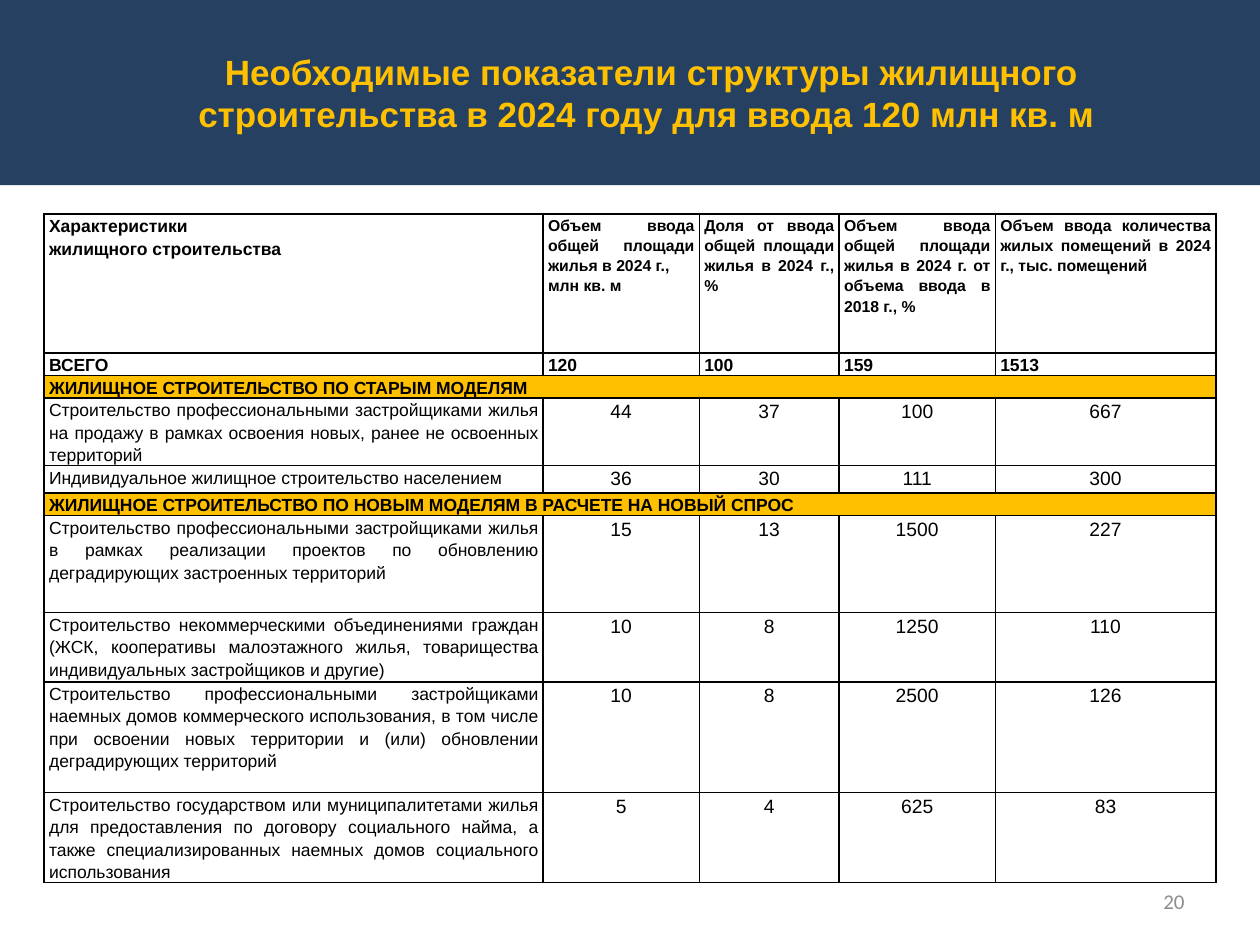
"""Builds a slide with the 2024 housing construction indicators."""
from lxml.etree import SubElement
from pptx import Presentation
from pptx.dml.color import RGBColor
from pptx.enum.shapes import MSO_SHAPE
from pptx.enum.text import MSO_ANCHOR, PP_ALIGN
from pptx.oxml import parse_xml
from pptx.oxml.ns import nsdecls, qn
from pptx.util import Inches, Pt

GRID = Inches(0.1)
SLIDE_COLUMNS, SLIDE_ROWS = 100, 75
COLORS = {"navy": "254061", "gold": "FFC000", "black": "000000", "gray": "8C8C8C"}

TITLE = "Необходимые показатели структуры жилищного строительства в 2024 году для ввода 120 млн кв. м "
TITLE_FORMAT = {"name": "Arial", "size": Pt(20), "bold": True}
NUMBER_FORMAT = {"name": "Calibri", "size": Pt(12), "bold": False}
LABEL_FORMAT = {"name": "Arial", "size": Pt(10), "bold": False}
STRONG_FORMAT = {**LABEL_FORMAT, "bold": True}
HEADING_FORMAT = {**STRONG_FORMAT, "size": Pt(9)}
VALUE_FORMAT = {**LABEL_FORMAT, "size": Pt(11)}

COLUMN_WIDTHS = [39.6, 12.4, 11.1, 12.4, 17.5]
ROWS = [
    ("heading", 11, ["Характеристики\nжилищного строительства",
                     "Объем ввода общей площади жилья в 2024 г.,\nмлн кв. м",
                     "Доля от ввода общей площади жилья в 2024 г., %",
                     "Объем ввода общей площади жилья в 2024 г. от объема ввода в 2018 г., %",
                     "Объем ввода количества жилых помещений в 2024 г., тыс. помещений"]),
    ("total", 1.1, ["ВСЕГО", "120", "100", "159", "1513"]),
    ("section", 1.1, ["ЖИЛИЩНОЕ СТРОИТЕЛЬСТВО ПО СТАРЫМ МОДЕЛЯМ"]),
    ("data", 4.4, ["Строительство профессиональными застройщиками жилья на продажу "
                   "в рамках освоения новых, ранее не освоенных территорий",
                   "44", "37", "100", "667"]),
    ("data", 2.2, ["Индивидуальное жилищное строительство населением",
                   "36", "30", "111", "300"]),
    ("section", 1.1, ["ЖИЛИЩНОЕ СТРОИТЕЛЬСТВО ПО НОВЫМ МОДЕЛЯМ В РАСЧЕТЕ НА НОВЫЙ СПРОС"]),
    ("data", 7.7, ["Строительство профессиональными застройщиками жилья в рамках реализации "
                   "проектов по обновлению деградирующих застроенных территорий",
                   "15", "13", "1500", "227"]),
    ("data", 5.5, ["Строительство некоммерческими объединениями граждан (ЖСК, кооперативы "
                   "малоэтажного жилья, товарищества индивидуальных застройщиков и другие)",
                   "10", "8", "1250", "110"]),
    ("data", 8.8, ["Строительство профессиональными застройщиками наемных домов коммерческого "
                   "использования, в том числе при освоении новых территории и (или) "
                   "обновлении деградирующих территорий",
                   "10", "8", "2500", "126"]),
    ("data", 6.6, ["Строительство государством или муниципалитетами жилья для предоставления "
                   "по договору социального найма, а также специализированных наемных домов "
                   "социального использования",
                   "5", "4", "625", "83"]),
]


def color(name):
    """Return the named colour."""
    return RGBColor.from_string(COLORS[name])


def grid(*cells):
    """Turn grid cells into lengths."""
    return [round(cell * GRID) for cell in cells]


def write(frame, text, font_format, color_name, alignment, line_spacing=None):
    """Write one paragraph per line of text in one format."""
    frame.text = text
    frame.word_wrap = True
    for paragraph in frame.paragraphs:
        paragraph.alignment = alignment
        paragraph.line_spacing = line_spacing
        for run in paragraph.runs:
            for attribute, value in font_format.items():
                setattr(run.font, attribute, value)
            run.font.color.rgb = color(color_name)


def add_band(slide):
    """Add the title band behind everything else."""
    band = slide.shapes.add_shape(MSO_SHAPE.RECTANGLE, *grid(0, 0, SLIDE_COLUMNS, 14.7))
    band.shadow.inherit = False
    band.fill.solid()
    band.fill.fore_color.rgb = color("navy")
    band.line.fill.background()
    band.element.getparent().insert(2, band.element)


def set_title(slide):
    """Place and format the title."""
    title = slide.shapes.title
    title.left, title.top, title.width, title.height = grid(6.7, 1.1, 90, 12.5)
    title.text_frame.vertical_anchor = MSO_ANCHOR.MIDDLE
    write(title.text_frame, TITLE, TITLE_FORMAT, "gold", PP_ALIGN.CENTER)


def add_slide_number(slide, number):
    """Add the slide number."""
    box = slide.shapes.add_textbox(*grid(71.7, 69.5, 23.3, 4))
    box.text_frame.vertical_anchor = MSO_ANCHOR.MIDDLE
    write(box.text_frame, number, NUMBER_FORMAT, "gray", PP_ALIGN.RIGHT)


def set_borders(cell):
    """Draw a thin line on each side of a cell."""
    properties = cell._tc.get_or_add_tcPr()
    for index, side in enumerate("LRTB"):
        line = parse_xml(f'<a:ln{side} {nsdecls("a")} w="{Pt(1)}"/>')
        fill = SubElement(line, qn("a:solidFill"))
        SubElement(fill, qn("a:srgbClr"), val=COLORS["black"])
        properties.insert(index, line)


def format_cell(cell, kind):
    """Set margins, fill and borders of a cell."""
    margins = {"margin_left": 0.04, "margin_right": 0.04, "margin_top": 0, "margin_bottom": 0}
    for attribute, value in margins.items():
        setattr(cell, attribute, Inches(value))
    if kind == "section":
        cell.fill.solid()
        cell.fill.fore_color.rgb = color("gold")
    else:
        cell.fill.background()
    set_borders(cell)


def cell_format(kind, column):
    """Return the font format and alignment for a cell."""
    if kind == "data":
        return (VALUE_FORMAT, PP_ALIGN.CENTER) if column else (LABEL_FORMAT, PP_ALIGN.JUSTIFY)
    if kind == "heading" and column:
        return HEADING_FORMAT, PP_ALIGN.JUSTIFY
    return STRONG_FORMAT, PP_ALIGN.JUSTIFY


def add_indicator_table(slide):
    """Add the table of indicators."""
    heights = [height for _, height, _ in ROWS]
    frame = slide.shapes.add_table(len(ROWS), len(COLUMN_WIDTHS),
                                   *grid(3.5, 17, sum(COLUMN_WIDTHS), sum(heights)))
    table = frame.table
    table.first_row = table.horz_banding = False
    for column, width in zip(table.columns, grid(*COLUMN_WIDTHS)):
        column.width = width
    for row, height, (kind, _, texts) in zip(table.rows, grid(*heights), ROWS):
        row.height = height
        cells = list(row.cells)
        for cell in cells:
            format_cell(cell, kind)
        if kind == "section":
            cells[0].merge(cells[-1])
        for column, (cell, text) in enumerate(zip(cells, texts)):
            font_format, alignment = cell_format(kind, column)
            write(cell.text_frame, text, font_format, "black", alignment, 1.15)


def main():
    """Build and save the presentation."""
    presentation = Presentation()
    presentation.slide_width, presentation.slide_height = grid(SLIDE_COLUMNS, SLIDE_ROWS)
    slide = presentation.slides.add_slide(presentation.slide_layouts[5])
    add_band(slide)
    set_title(slide)
    add_indicator_table(slide)
    add_slide_number(slide, "20")
    presentation.save("out.pptx")


if __name__ == "__main__":
    main()
